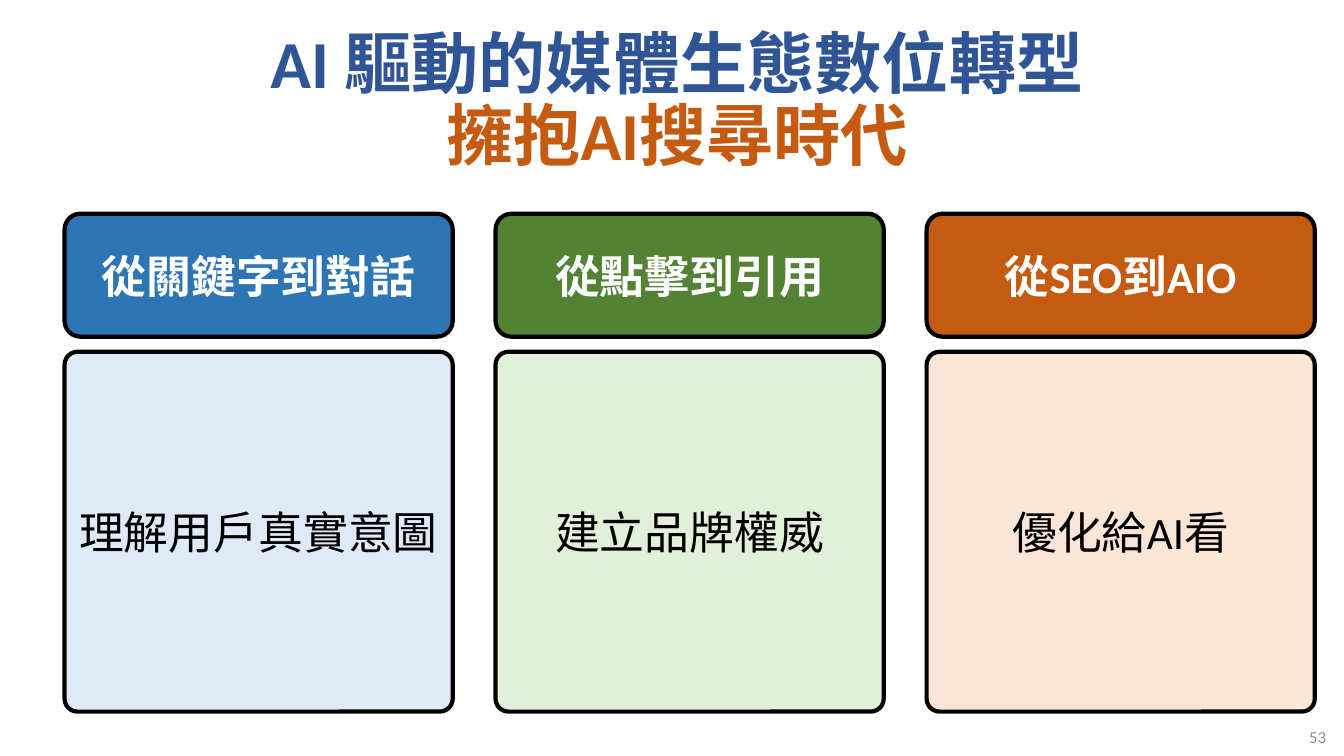
from dataclasses import dataclass

from pptx import Presentation
from pptx.dml.color import RGBColor
from pptx.enum.shapes import MSO_SHAPE
from pptx.enum.text import MSO_ANCHOR, MSO_AUTO_SIZE, PP_ALIGN
from pptx.util import Inches, Pt

ROUNDED = MSO_SHAPE.ROUNDED_RECTANGLE
MIDDLE = MSO_ANCHOR.MIDDLE
NO_FIT = MSO_AUTO_SIZE.NONE
CENTER, RIGHT = PP_ALIGN.CENTER, PP_ALIGN.RIGHT

FONT = "Calibri"
COLORS = {
    "title": "2F5597",
    "blue": "2E75B6",
    "pale_blue": "DEEBF7",
    "green": "548235",
    "pale_green": "E2F0D9",
    "orange": "C55A11",
    "pale_orange": "FBE5D6",
    "black": "000000",
    "white": "FFFFFF",
    "gray": "8C8C8C",
}
LEFT, PITCH, WIDTH = 0.64, 4.275, 3.85


@dataclass
class Column:
    heading: str
    body: str
    color: str


@dataclass
class Row:
    top: float
    height: float
    corner: float
    inset: float
    text_color: str
    bold: bool


COLUMNS = [
    Column("從關鍵字到對話", "理解用戶真實意圖", "blue"),
    Column("從點擊到引用", "建立品牌權威", "green"),
    Column("從SEO到AIO", "優化給AI看", "orange"),
]
HEADING = Row(2.12, 1.22, 0.129, 0, "white", True)
BODY = Row(3.49, 3.57, 0.036, 0.08, "black", False)


def rgb(name: str) -> RGBColor:
    """Return the named colour."""
    return RGBColor.from_string(COLORS[name])


def add_run(p, text: str, size: int, color: str, bold: bool = False) -> None:
    """Append a formatted run to a paragraph."""
    r = p.add_run()
    r.text = text
    r.font.name = FONT
    r.font.size = Pt(size)
    r.font.bold = bold
    r.font.color.rgb = rgb(color)


def add_title(s) -> None:
    """Place and fill the two-line title."""
    sp = s.shapes.title
    sp.left, sp.top = Inches(0.58), Inches(0.15)
    sp.width, sp.height = Inches(12.27), Inches(1.74)
    tf = sp.text_frame
    tf.auto_size = NO_FIT
    tf.vertical_anchor = MIDDLE
    p = tf.paragraphs[0]
    p.alignment = CENTER
    p.line_spacing = 0.9
    add_run(p, "AI 驅動的媒體生態數位轉型", 48, "title", True)
    p.add_line_break()
    add_run(p, "擁抱AI搜尋時代", 48, "orange", True)


def add_card(s, left: float, row: Row, text: str, fill: str) -> None:
    """Draw one rounded card with centred text."""
    sp = s.shapes.add_shape(ROUNDED, Inches(left), Inches(row.top),
                            Inches(WIDTH), Inches(row.height))
    sp.adjustments[0] = row.corner
    sp.shadow.inherit = False
    sp.fill.solid()
    sp.fill.fore_color.rgb = rgb(fill)
    sp.line.color.rgb = rgb("black")
    sp.line.width = Pt(3)
    tf = sp.text_frame
    tf.word_wrap = True
    tf.vertical_anchor = MIDDLE
    tf.margin_left = tf.margin_right = Inches(row.inset)
    tf.margin_top = tf.margin_bottom = 0
    p = tf.paragraphs[0]
    p.alignment = CENTER
    add_run(p, text, 32, row.text_color, row.bold)


def add_page_number(s, number: str) -> None:
    """Write the page number in the lower right corner."""
    sp = s.shapes.add_textbox(Inches(12.2), Inches(7.18), Inches(1.05), Inches(0.26))
    tf = sp.text_frame
    tf.word_wrap = True
    tf.vertical_anchor = MIDDLE
    p = tf.paragraphs[0]
    p.alignment = RIGHT
    add_run(p, number, 12, "gray")


def main() -> None:
    """Build and save the slide."""
    prs = Presentation()
    prs.slide_width, prs.slide_height = Inches(13.33), Inches(7.5)
    s = prs.slides.add_slide(prs.slide_layouts[5])
    add_title(s)
    add_page_number(s, "53")
    for i, column in enumerate(COLUMNS):
        left = LEFT + i * PITCH
        add_card(s, left, HEADING, column.heading, column.color)
        add_card(s, left, BODY, column.body, f"pale_{column.color}")
    prs.save("out.pptx")


if __name__ == "__main__":
    main()
